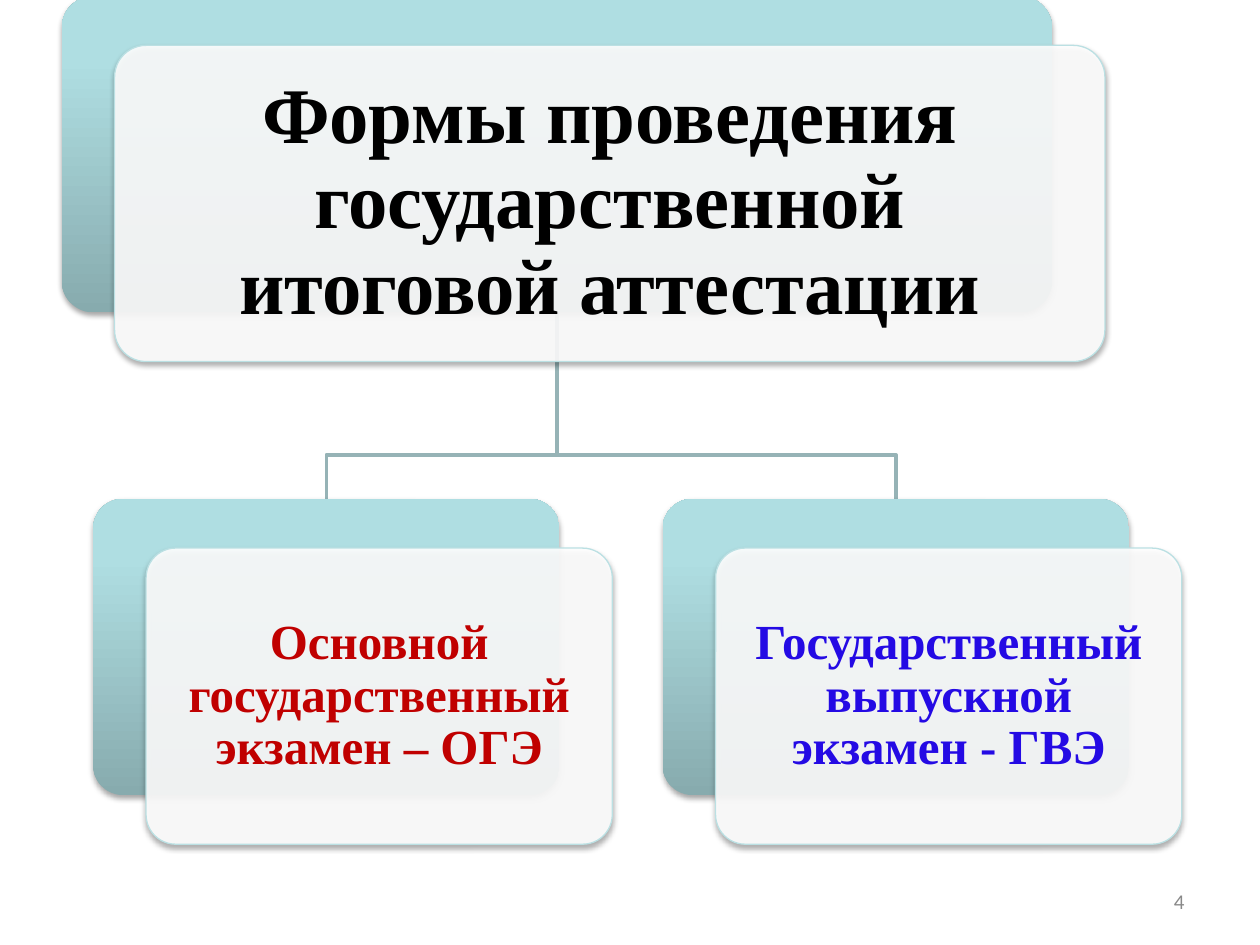
from copy import deepcopy
from lxml.etree import SubElement
from pptx import Presentation
from pptx.dml.color import RGBColor
from pptx.enum.shapes import MSO_SHAPE
from pptx.enum.text import MSO_ANCHOR, PP_ALIGN
from pptx.oxml.ns import qn
from pptx.util import Inches, Pt

STOPS = [(0, "87ABAE"), (0.8, "AFDEE2"), (1, "AFE0E4")]
SHIFT_X, SHIFT_Y, INSET = 0.42, 0.39, 0.07
SERIF = "Times New Roman"


def paint(color, code):
    color.rgb = RGBColor.from_string(code)


def place(shape, left, top, width, height):
    shape.left, shape.top = Inches(left), Inches(top)
    shape.width, shape.height = Inches(width), Inches(height)


def add_shadow(shape):
    shape.shadow.inherit = False
    effects = shape._element.spPr.find(qn("a:effectLst"))
    outer = SubElement(effects, qn("a:outerShdw"), blurRad="40000",
                       dist="23000", dir="5400000", rotWithShape="0")
    black = SubElement(outer, qn("a:srgbClr"), val="000000")
    SubElement(black, qn("a:alpha"), val="35000")


def add_card(slide, left, top, width, height):
    card = slide.shapes.add_shape(
        MSO_SHAPE.ROUNDED_RECTANGLE,
        Inches(left), Inches(top), Inches(width), Inches(height))
    card.adjustments[0] = 0.1
    add_shadow(card)
    return card


def add_back(slide, *box):
    card = add_card(slide, *box)
    card.line.fill.background()
    card.fill.gradient()
    card.fill.gradient_angle = 90
    stops = card._element.spPr.find(".//" + qn("a:gsLst"))
    stops.append(deepcopy(stops[0]))
    for stop, (pos, code) in zip(card.fill.gradient_stops, STOPS):
        stop.position = pos
        paint(stop.color, code)


def add_front(slide, *box):
    card = add_card(slide, *box)
    card.fill.solid()
    paint(card.fill.fore_color, "FFFFFF")
    white = card._element.spPr.find(qn("a:solidFill"))[0]
    SubElement(white, qn("a:alpha"), val="90000")
    paint(card.line.color, "BBE0E3")
    card.line.width = Pt(0.75)


def add_pair(slide, left, top, width, height):
    add_back(slide, left, top, width, height)
    left, top = left + SHIFT_X, top + SHIFT_Y
    add_front(slide, left, top, width, height)
    return (left + INSET, top + INSET, width - 2 * INSET, height - 2 * INSET)


def add_link(slide, start, end, bend):
    (x1, y1), (x2, y2) = start, end
    path = slide.shapes.build_freeform(Inches(x1), Inches(y1))
    path.add_line_segments(
        [(Inches(x), Inches(y)) for x, y in [(x1, bend), (x2, bend), (x2, y2)]],
        close=False)
    link = path.convert_to_shape()
    link.fill.background()
    paint(link.line.color, "96B3B6")
    link.line.width = Pt(2)
    link.shadow.inherit = False


def write(shape, text, size, code, font=SERIF, bold=True,
          align=PP_ALIGN.CENTER, pad=None, space=None):
    frame = shape.text_frame
    frame.word_wrap = True
    frame.vertical_anchor = MSO_ANCHOR.MIDDLE
    if pad is not None:
        frame.margin_left = frame.margin_right = Inches(pad)
        frame.margin_top = frame.margin_bottom = Inches(pad)
    para = frame.paragraphs[0]
    para.alignment = align
    para.line_spacing = space
    run = para.add_run()
    run.text = text
    run.font.name, run.font.size, run.font.bold = font, Pt(size), bold
    paint(run.font.color, code)


def add_text(slide, box, *args, **style):
    label = slide.shapes.add_textbox(0, 0, 0, 0)
    place(label, *box)
    write(label, *args, **style)


def add_title(slide, box, text):
    title = slide.shapes.title
    place(title, *box)
    write(title, text, 45, "000000", pad=0.19, space=0.9)
    slide.shapes._spTree.append(title._element)


def main():
    deck = Presentation()
    deck.slide_width, deck.slide_height = Inches(10), Inches(7.5)
    slide = deck.slides.add_slide(deck.slide_layouts[5])

    left, top, width, height = root = (0.49, -0.03, 7.86, 2.51)
    start = (left + width / 2, top + height)
    exams = [
        (5.26, "Государственный выпускной экзамен - ГВЭ", "240AE4"),
        (0.74, "Основной государственный экзамен – ОГЭ", "C00000"),
    ]
    row, wide, high = 3.96, 3.7, 2.35
    for x, _, _ in exams:
        add_link(slide, start, (x + wide / 2, row), 3.61)

    add_title(slide, add_pair(slide, *root),
              "Формы проведения государственной итоговой аттестации")
    for x, text, code in reversed(exams):
        box = add_pair(slide, x, row, wide, high)
        add_text(slide, box, text, 28, code, pad=0.12, space=0.9)

    add_text(slide, (7.17, 6.95, 2.33, 0.4), "4", 12, "898989",
             font="Calibri", bold=False, align=PP_ALIGN.RIGHT)
    deck.save("out.pptx")


if __name__ == "__main__":
    main()
